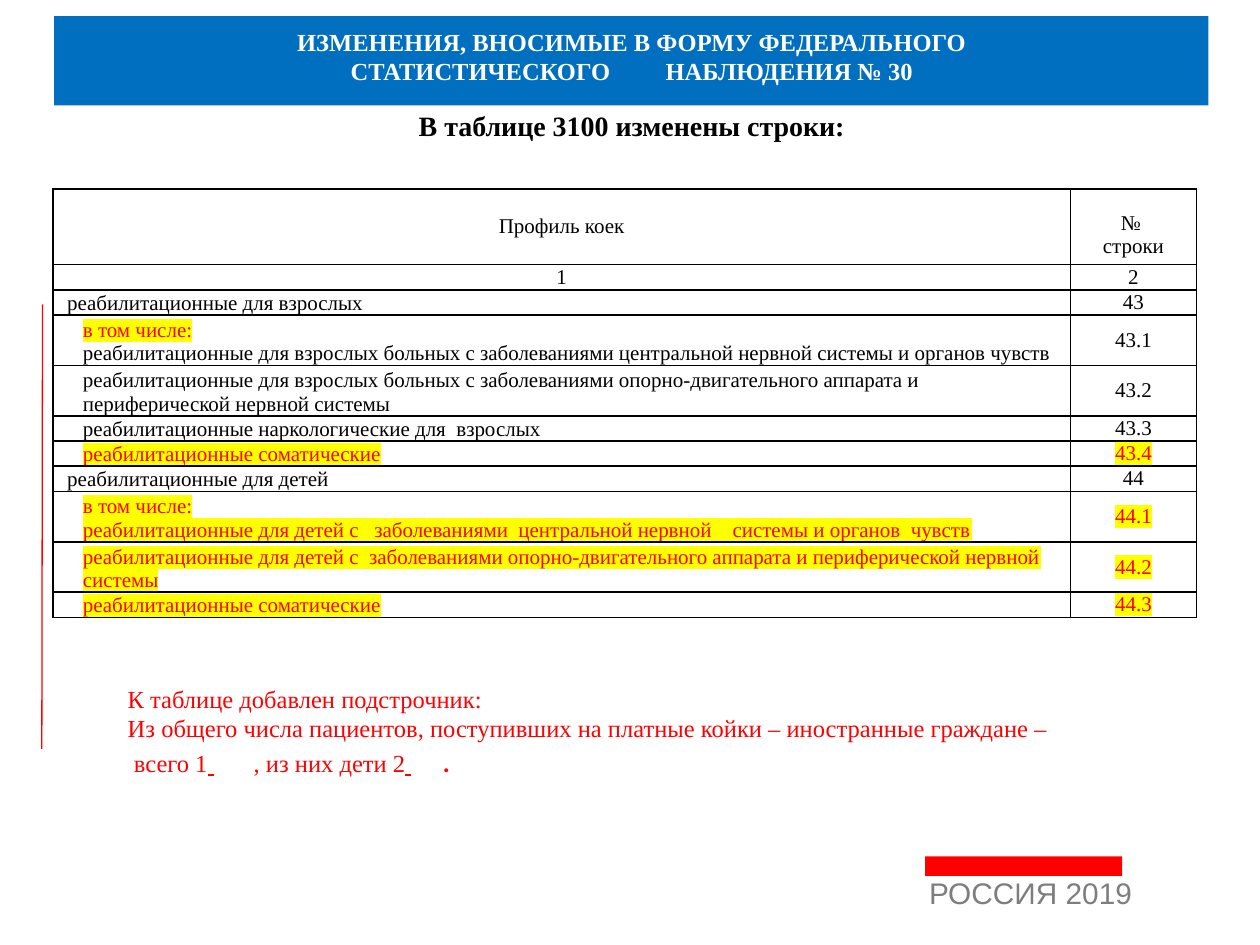
import pptx
import pptx.util
import pptx.dml.color
import pptx.enum.shapes
import pptx.enum.text
from lxml import etree
from pptx.oxml.ns import qn

Pt = pptx.util.Pt
RGBColor = pptx.dml.color.RGBColor
ALIGN = pptx.enum.text.PP_ALIGN
ANCHOR = pptx.enum.text.MSO_ANCHOR

RED = RGBColor(0xFF, 0x00, 0x00)
BLUE = RGBColor(0x00, 0x6F, 0xC0)
YELLOW = RGBColor(0xFF, 0xFF, 0x00)
BLACK = RGBColor(0x00, 0x00, 0x00)
WHITE = RGBColor(0xFF, 0xFF, 0xFF)
GREY = RGBColor(0x7E, 0x7E, 0x7E)
SERIF = "Times New Roman"

# Content
HEADING = [
    ("ИЗМЕНЕНИЯ, ВНОСИМЫЕ В ФОРМУ ФЕДЕРАЛЬНОГО", 14, WHITE, 0.9),
    ("СТАТИСТИЧЕСКОГО\tНАБЛЮДЕНИЯ № 30", 14, WHITE, 0),
    ("В таблице 3100 изменены строки:", 16, BLACK, 13.2),
]

# Bed profiles: number, (lines), indent level, style of each line, style of number
PLAIN, NEW = (BLACK, None), (RED, YELLOW)
PROFILES = [
    ("43", ["реабилитационные для взрослых"], 0, [PLAIN], PLAIN),
    ("43.1", ["в том числе:",
              "реабилитационные для взрослых больных с заболеваниями "
              "центральной нервной системы и органов чувств"], 1, [NEW, PLAIN], PLAIN),
    ("43.2", ["реабилитационные для взрослых больных с заболеваниями "
              "опорно-двигательного аппарата и",
              "периферической нервной системы"], 1, [PLAIN, PLAIN], PLAIN),
    ("43.3", ["реабилитационные наркологические для  взрослых"], 1, [PLAIN], PLAIN),
    ("43.4", ["реабилитационные соматические"], 1, [NEW], NEW),
    ("44", ["реабилитационные для детей"], 0, [PLAIN], PLAIN),
    ("44.1", ["в том числе:",
              "реабилитационные для детей с   заболеваниями  центральной "
              "нервной    системы и органов  чувств"], 1, [NEW, NEW], NEW),
    ("44.2", ["реабилитационные для детей с  заболеваниями опорно-двигательного "
              "аппарата и периферической нервной", "системы"], 1, [NEW, NEW], NEW),
    ("44.3", ["реабилитационные соматические"], 1, [NEW], NEW),
]
FOOTNOTE_INTRO = "К таблице добавлен подстрочник:"
FOOTNOTE = [
    ("Из общего числа пациентов, поступивших на платные койки – "
     "иностранные граждане –  всего 1", {}),
    (" \t", {"underline": True}),
    (", из них дети 2", {}),
    (" \t", {"underline": True}),
    (".", {"size": Pt(18), "name": "Lato"}),
]
EVENT = "РОССИЯ 2019"

# Geometry
LINE_HEIGHT, HEADER_HEIGHT = 14.4, 43.2
COLUMNS = (581.5, 72)
FIRST_INDENT, LEVEL_INDENT = 3, 9


def add_run(paragraph, text, points, color, highlight=None, **formats):
    run = paragraph.add_run()
    run.text = text
    for key, value in {"size": Pt(points), "name": SERIF, **formats}.items():
        setattr(run.font, key, value)
    run.font.color.rgb = color
    if highlight is not None:
        mark = etree.Element(qn("a:highlight"))
        etree.SubElement(mark, qn("a:srgbClr")).set("val", str(highlight))
        run.font._element.find(qn("a:solidFill")).addnext(mark)


def set_paragraph(paragraph, indent=0, tabs=(), **formats):
    for key, value in formats.items():
        setattr(paragraph, key, value)
    properties = paragraph._p.get_or_add_pPr()
    properties.set("marL", str(Pt(indent)))
    properties.set("indent", "0")
    if tabs:
        stops = etree.SubElement(properties, qn("a:tabLst"))
        for position in tabs:
            etree.SubElement(stops, qn("a:tab"), pos=str(Pt(position)), algn="l")


def paragraphs(frame, count):
    return [frame.paragraphs[0]] + [frame.add_paragraph() for _ in range(count - 1)]


def set_frame(frame):
    formats = {"margin_left": 0, "margin_top": Pt(0.9), "margin_right": 0,
               "margin_bottom": 0, "word_wrap": True, "vertical_anchor": ANCHOR.TOP,
               "auto_size": pptx.enum.text.MSO_AUTO_SIZE.NONE}
    for key, value in formats.items():
        setattr(frame, key, value)
    return frame


def add_bar(slide, color, *box):
    bar = slide.shapes.add_shape(pptx.enum.shapes.MSO_SHAPE.RECTANGLE, *map(Pt, box))
    bar.shadow.inherit = False
    bar.fill.solid()
    bar.fill.fore_color.rgb = color
    bar.line.fill.background()
    return bar


def set_cell(cell, margin, anchor):
    formats = {"margin_left": Pt(margin), "margin_right": Pt(margin),
               "margin_top": 0, "margin_bottom": 0, "vertical_anchor": anchor}
    for key, value in formats.items():
        setattr(cell, key, value)
    properties = cell._tc.get_or_add_tcPr()
    for side in ("lnL", "lnR", "lnT", "lnB"):
        border = etree.SubElement(properties, qn("a:" + side), w=str(Pt(1)))
        fill = etree.SubElement(border, qn("a:solidFill"))
        etree.SubElement(fill, qn("a:srgbClr")).set("val", str(BLACK))
    cell.fill.background()


def add_heading(slide):
    bar = add_bar(slide, BLUE, 31, 9.2, 659.5, 51)
    title = slide.shapes.title
    bar._element.addnext(title._element)
    title.left, title.top, title.width, title.height = map(Pt, (145.4, 14.4, 431.3, 67.7))
    frame = set_frame(title.text_frame)
    for paragraph, (text, points, color, before) in zip(
            paragraphs(frame, len(HEADING)), HEADING):
        add_run(paragraph, text, points, color, bold=True)
        set_paragraph(paragraph, tabs=(174.2,) if "\t" in text else (),
                      alignment=ALIGN.CENTER, space_before=Pt(before))


def add_profiles(slide):
    heights = [HEADER_HEIGHT, LINE_HEIGHT]
    heights += [LINE_HEIGHT * len(lines) for _, lines, *_ in PROFILES]
    table = slide.shapes.add_table(len(heights), len(COLUMNS), Pt(30.2), Pt(108),
                                   Pt(sum(COLUMNS)), Pt(sum(heights))).table
    table.first_row = table.horz_banding = False
    for column, width in zip(table.columns, COLUMNS):
        column.width = Pt(width)
    for row, height in zip(table.rows, heights):
        row.height = Pt(height)

    # Header and column numbers
    for row, labels in enumerate([("Профиль коек", "№ \vстроки"), ("1", "2")]):
        for column, label in enumerate(labels):
            cell = table.cell(row, column)
            set_cell(cell, 3.6, ANCHOR.MIDDLE)
            paragraph = cell.text_frame.paragraphs[0]
            paragraph.alignment = ALIGN.CENTER
            for number, part in enumerate(label.split("\v")):
                if number:
                    paragraph.add_line_break()
                add_run(paragraph, part, 12, BLACK)
    number_header = table.cell(0, 1)
    number_header.vertical_anchor = ANCHOR.TOP
    number_header.margin_top = Pt(13)

    # Bed profiles
    for row, (number, lines, level, styles, number_style) in enumerate(PROFILES, 2):
        profile, code = table.cell(row, 0), table.cell(row, 1)
        set_cell(profile, 5.2, ANCHOR.BOTTOM)
        set_cell(code, 5.2, ANCHOR.MIDDLE)
        for paragraph, line, style in zip(
                paragraphs(profile.text_frame, len(lines)), lines, styles):
            add_run(paragraph, line, 12, *style)
            set_paragraph(paragraph, FIRST_INDENT + level * LEVEL_INDENT)
        add_run(code.text_frame.paragraphs[0], number, 12, *number_style)
        code.text_frame.paragraphs[0].alignment = ALIGN.CENTER


def add_footnote(slide):
    box = slide.shapes.add_textbox(*map(Pt, (72, 390.2, 527, 56.9)))
    intro, note = paragraphs(set_frame(box.text_frame), 2)
    add_run(intro, FOOTNOTE_INTRO, 14, RED)
    set_paragraph(intro, 1, space_before=Pt(1.1))
    for text, formats in FOOTNOTE:
        add_run(note, text, 14, RED, **formats)
    set_paragraph(note, 1, (103, 237.6), line_spacing=0.96, space_before=Pt(0.6))


def add_event(slide):
    add_bar(slide, RED, 528.7, 489.3, 112.5, 11.2)
    box = slide.shapes.add_textbox(*map(Pt, (529.9, 500.4, 125, 20.9)))
    frame = set_frame(box.text_frame)
    frame.margin_top = 0
    add_run(frame.paragraphs[0], EVENT, 17, GREY, name="Arial")
    set_paragraph(frame.paragraphs[0], 1, line_spacing=Pt(19.9))


def add_change_line(slide):
    change = slide.shapes.add_connector(pptx.enum.shapes.MSO_CONNECTOR.STRAIGHT,
                                        *map(Pt, (24.3, 174, 23.9, 428)))
    change.line.color.rgb = RED
    change.line.width = Pt(0.75)
    etree.SubElement(change._element.spPr, qn("a:effectLst"))


def main():
    deck = pptx.Presentation()
    deck.slide_width, deck.slide_height = Pt(720), Pt(540)
    slide = deck.slides.add_slide(deck.slide_layouts[5])
    for add_part in (add_change_line, add_heading, add_event, add_footnote, add_profiles):
        add_part(slide)
    deck.save("out.pptx")


if __name__ == "__main__":
    main()
